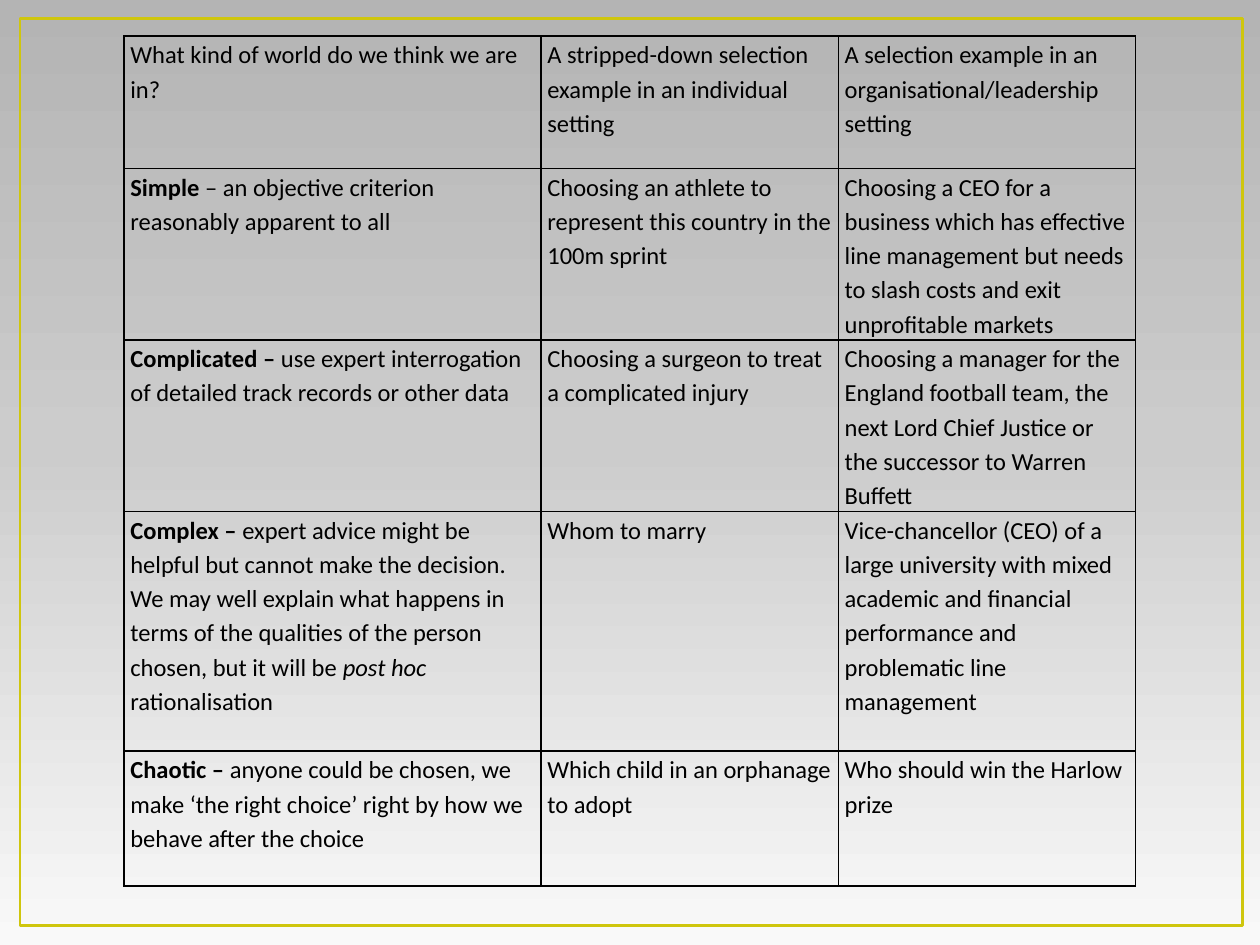
import copy

import lxml.etree
import pptx
import pptx.dml.color
import pptx.enum.shapes
import pptx.oxml.ns
import pptx.util

Pt = pptx.util.Pt
qn = pptx.oxml.ns.qn


def color(value):
    return pptx.dml.color.RGBColor.from_string(value)


def add_borders(cell, value, width):
    properties = cell._tc.get_or_add_tcPr()
    for index, side in enumerate(("a:lnL", "a:lnR", "a:lnT", "a:lnB")):
        line = lxml.etree.Element(qn(side), w=str(Pt(width)))
        solid = lxml.etree.SubElement(line, qn("a:solidFill"))
        lxml.etree.SubElement(solid, qn("a:srgbClr"), val=value)
        properties.insert(index, line)


deck = pptx.Presentation()
deck.slide_width, deck.slide_height = Pt(720), Pt(540)
page = deck.slides.add_slide(deck.slide_layouts[6])

backdrop = page.background.fill
backdrop.gradient()
backdrop.gradient_angle = 90
stop_list = page.element.find(".//" + qn("a:gsLst"))
stop_list.append(copy.deepcopy(stop_list[-1]))
gradient = [(0, "F9F9F9"), (0.53, "CCCCCC"), (1, "B4B4B4")]
for stop, (position, value) in zip(backdrop.gradient_stops, gradient):
    stop.position = position
    stop.color.rgb = color(value)

frame = page.shapes.add_shape(
    pptx.enum.shapes.MSO_SHAPE.RECTANGLE, Pt(11.5), Pt(10.5), Pt(698.5), Pt(518.5)
)
frame.shadow.inherit = False
frame.fill.background()
frame.line.color.rgb = color("CFC60D")
frame.line.width = Pt(1.5)

rows = [
    [
        [("What kind of world do we think we are in?", "")],
        [("A stripped-down selection example in an individual setting", "")],
        [("A selection example in an organisational/leadership setting", "")],
    ],
    [
        [("Simple", "bold"), (" – an objective criterion reasonably apparent to all", "")],
        [("Choosing an athlete to represent this country in the 100m sprint", "")],
        [("Choosing a CEO for a business which has effective line management "
          "but needs to slash costs and exit unprofitable markets", "")],
    ],
    [
        [("Complicated – ", "bold"),
         ("use expert interrogation of detailed track records or other data", "")],
        [("Choosing a surgeon to treat a complicated injury", "")],
        [("Choosing a manager for the England football team, the next Lord Chief "
          "Justice or the successor to Warren Buffett", "")],
    ],
    [
        [("Complex – ", "bold"),
         ("expert advice might be helpful but cannot make the decision. We may well "
          "explain what happens in terms of the qualities of the person chosen, "
          "but it will be ", ""),
         ("post hoc ", "italic"), ("rationalisation", "")],
        [("Whom to marry", "")],
        [("Vice-chancellor (CEO) of a large university with mixed academic and "
          "financial performance and problematic line management", "")],
    ],
    [
        [("Chaotic – ", "bold"),
         ("anyone could be chosen, we make ‘the right choice’ right by how we behave "
          "after the choice", "")],
        [("Which child in an orphanage to adopt", "")],
        [("Who should win the Harlow prize", "")],
    ],
]
column_widths = [238.3, 169.9, 169.9]
row_heights = [75.5, 98, 98, 137, 77]
cell_format = {
    "margin_left": Pt(3.6),
    "margin_right": Pt(3.6),
    "margin_top": 0,
    "margin_bottom": 0,
}
font_format = {"name": "Calibri", "size": Pt(14)}

table = page.shapes.add_table(
    len(rows), len(column_widths), Pt(70.9), Pt(20.7),
    Pt(sum(column_widths)), Pt(sum(row_heights)),
).table
for name in ("first_row", "horz_banding"):
    setattr(table, name, False)
for column, width in zip(table.columns, column_widths):
    column.width = Pt(width)
for row, height in zip(table.rows, row_heights):
    row.height = Pt(height)

for row, contents in zip(table.rows, rows):
    for cell, pieces in zip(row.cells, contents):
        for name, value in cell_format.items():
            setattr(cell, name, value)
        cell.fill.background()
        add_borders(cell, "000000", 1)
        para = cell.text_frame.paragraphs[0]
        para.line_spacing = 1.15
        for text, emphasis in pieces:
            span = para.add_run()
            span.text = text
            for name, value in font_format.items():
                setattr(span.font, name, value)
            span.font.color.rgb = color("000000")
            if emphasis:
                setattr(span.font, emphasis, True)

deck.save("out.pptx")
